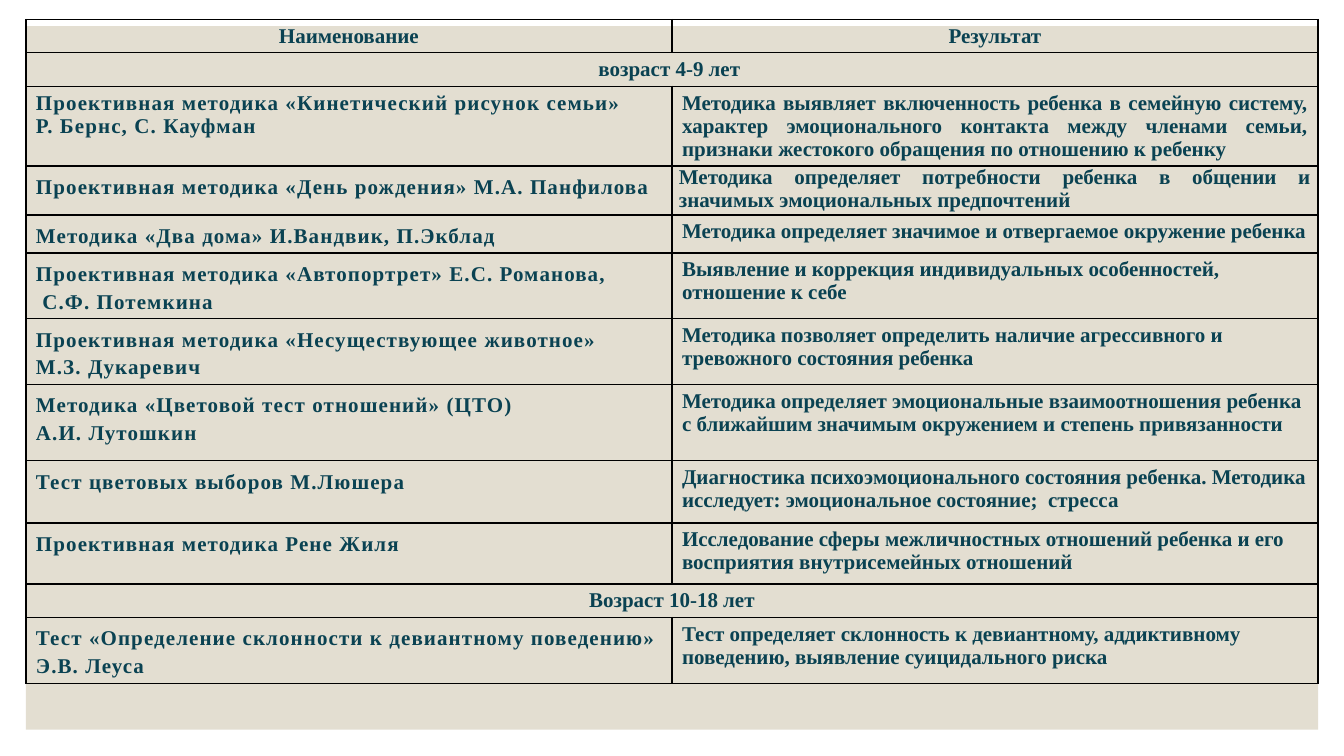
"""Build a slide with a table of psychological assessment methods by age group."""
from dataclasses import dataclass

from lxml.etree import SubElement
from pptx import Presentation
from pptx.dml.color import RGBColor
from pptx.enum.shapes import MSO_SHAPE
from pptx.enum.text import PP_ALIGN as Align
from pptx.oxml.ns import qn
from pptx.util import Pt


@dataclass(frozen=True)
class Theme:
    panel: str = "E3DED1"
    ink: str = "0A4252"
    border: str = "000000"
    font: str = "Times New Roman"
    size: float = 15
    border_width: float = 1
    tracking: str = "80"


theme = Theme()


def add_borders(cell):
    properties = cell._tc.get_or_add_tcPr()
    for side in ("a:lnL", "a:lnR", "a:lnT", "a:lnB"):
        line = SubElement(properties, qn(side), w=str(Pt(theme.border_width)))
        fill = SubElement(line, qn("a:solidFill"))
        SubElement(fill, qn("a:srgbClr"), val=theme.border)


def write_cell(cell, text, align, spacing=1.0, tracked=False):
    cell.text_frame.text = text
    for para in cell.text_frame.paragraphs:
        para.alignment = align
        para.line_spacing = spacing
        for span in para.runs:
            span.font.name = theme.font
            span.font.size = Pt(theme.size)
            span.font.bold = True
            span.font.color.rgb = RGBColor.from_string(theme.ink)
            if tracked:
                span._r.get_or_add_rPr().set("spc", theme.tracking)


HEADER = ("Наименование", "Результат")
YOUNGER = "возраст 4-9 лет "
OLDER = "Возраст 10-18 лет"
BIRTHDAY_ROW = 3

rows = [
    (23.5, HEADER),
    (24, (YOUNGER,)),
    (57, ("Проективная методика «Кинетический рисунок семьи»\nР. Бернс, С. Кауфман",
          "Методика выявляет включенность ребенка в семейную систему, характер "
          "эмоционального контакта между членами семьи, признаки жестокого "
          "обращения по отношению к ребенку")),
    (35, ("Проективная методика «День рождения» М.А. Панфилова",
          "Методика определяет потребности ребенка в общении и значимых "
          "эмоциональных предпочтений")),
    (27, ("Методика «Два дома» И.Вандвик, П.Экблад",
          "Методика определяет значимое и отвергаемое окружение ребенка")),
    (47, ("Проективная методика «Автопортрет» Е.С. Романова,\n С.Ф. Потемкина",
          "Выявление и коррекция индивидуальных особенностей, отношение к себе")),
    (47, ("Проективная методика «Несуществующее животное»\nМ.З. Дукаревич",
          "Методика позволяет определить наличие агрессивного и тревожного "
          "состояния ребенка")),
    (54.5, ("Методика «Цветовой тест отношений» (ЦТО)\nА.И. Лутошкин",
            "Методика определяет эмоциональные взаимоотношения ребенка с "
            "ближайшим значимым окружением и степень привязанности")),
    (44.5, ("Тест цветовых выборов М.Люшера",
            "Диагностика психоэмоционального состояния ребенка. Методика "
            "исследует: эмоциональное состояние;  стресса")),
    (43.5, ("Проективная методика Рене Жиля",
            "Исследование сферы межличностных отношений ребенка и его "
            "восприятия внутрисемейных отношений")),
    (24, (OLDER,)),
    (47, ("Тест «Определение склонности к девиантному поведению» Э.В. Леуса",
          "Тест определяет склонность к девиантному, аддиктивному поведению, "
          "выявление суицидального риска")),
]
justified_rows = (2, 3, 4)
single_spaced_row = 2

deck = Presentation()
deck.slide_width, deck.slide_height = Pt(960), Pt(540)
page = deck.slides.add_slide(deck.slide_layouts[6])

left, width = Pt(18.5), Pt(923)
panel = page.shapes.add_shape(MSO_SHAPE.RECTANGLE, left, Pt(18.7), width, Pt(502.5))
panel.shadow.inherit = False
panel.fill.solid()
panel.fill.fore_color.rgb = RGBColor.from_string(theme.panel)
panel.line.fill.background()

total_height = Pt(sum(height for height, _ in rows))
table = page.shapes.add_table(len(rows), 2, left, Pt(13.9), width, total_height).table
table.first_row = False
table.horz_banding = False
for column in table.columns:
    column.width = width // 2

for index, (height, texts) in enumerate(rows):
    table.rows[index].height = Pt(height)
    name, result = table.cell(index, 0), table.cell(index, 1)
    for cell in (name, result):
        add_borders(cell)
        cell.fill.background()
    if len(texts) == 1:
        name.merge(result)
        write_cell(name, texts[0], Align.CENTER)
    elif texts == HEADER:
        write_cell(name, texts[0], Align.CENTER)
        write_cell(result, texts[1], Align.CENTER)
    else:
        spacing = 1.0 if index == single_spaced_row else 1.2
        align = Align.JUSTIFY if index in justified_rows else Align.LEFT
        write_cell(name, texts[0], Align.LEFT, spacing, tracked=True)
        write_cell(result, texts[1], align)

birthday_result = table.cell(BIRTHDAY_ROW, 1)
birthday_result.margin_left = birthday_result.margin_right = Pt(5)
birthday_result.margin_top = birthday_result.margin_bottom = Pt(0)

deck.save("out.pptx")
